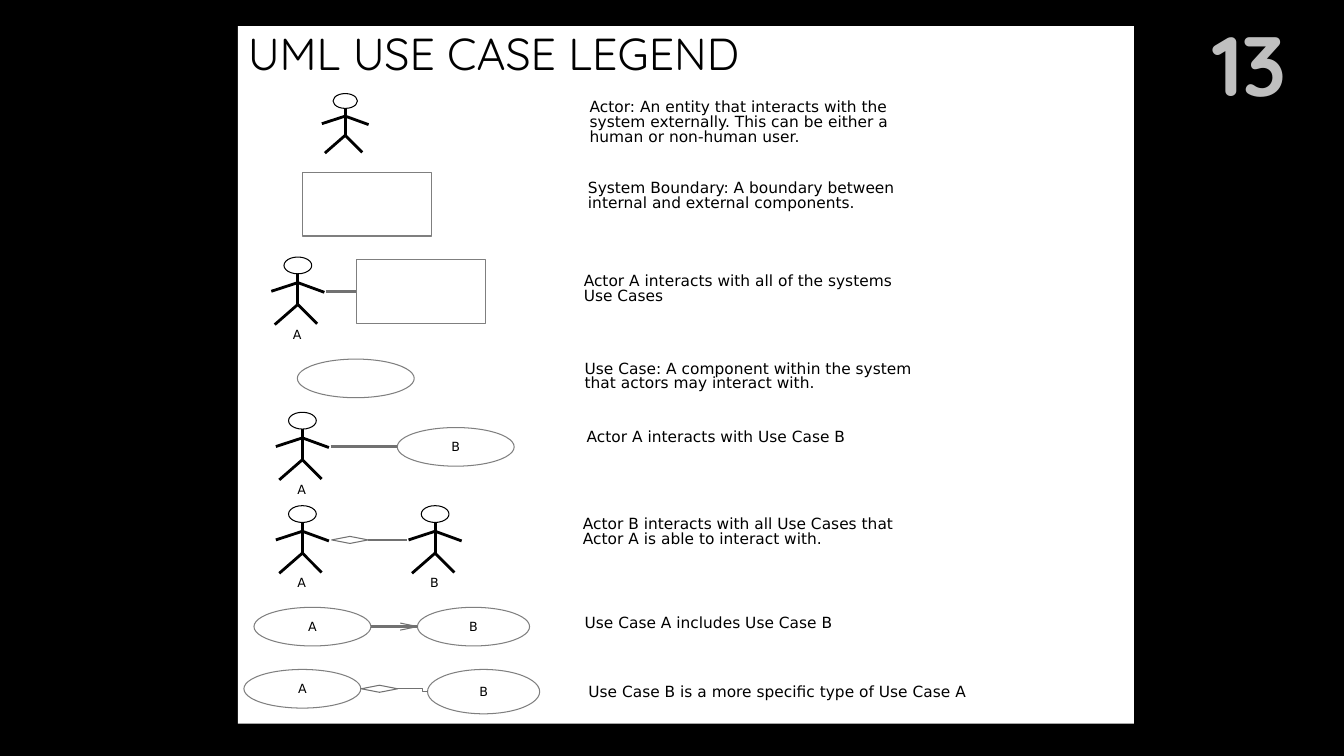
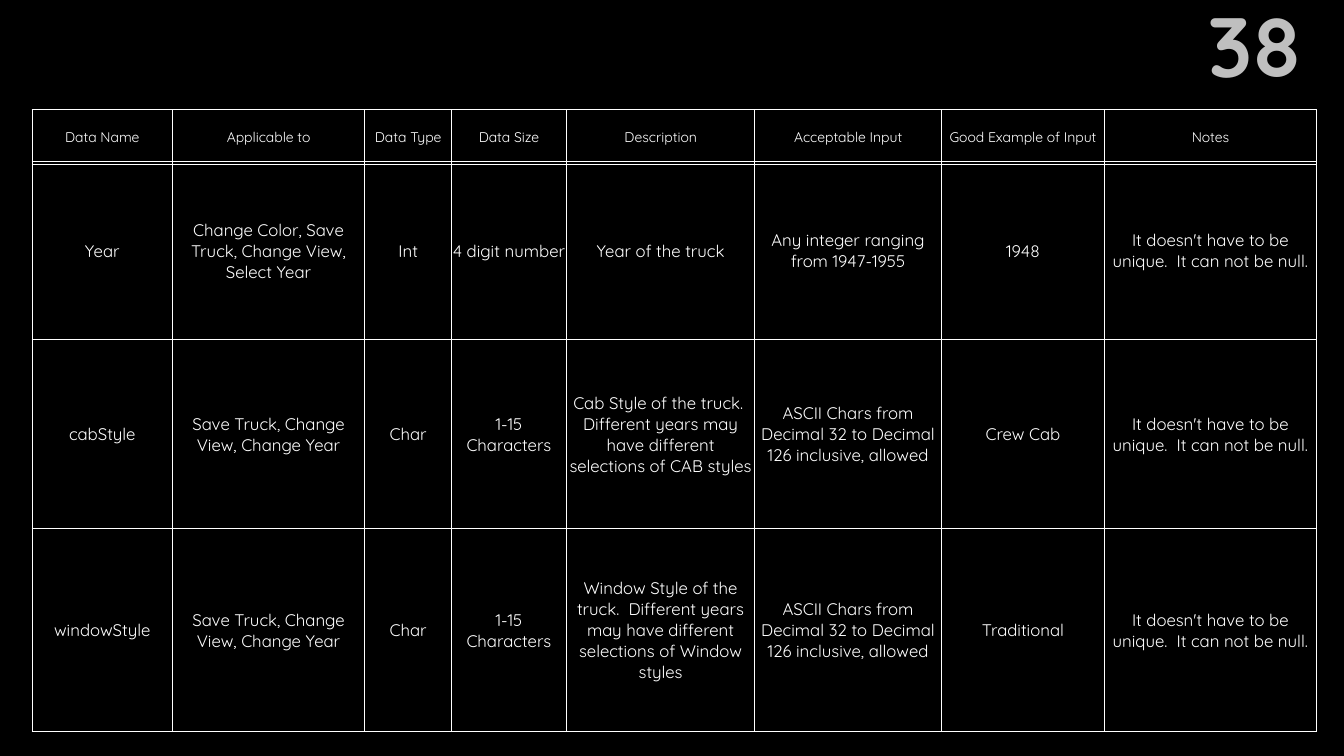
from lxml.etree import SubElement
from pptx import Presentation
from pptx.dml.color import RGBColor
from pptx.enum.shapes import MSO_CONNECTOR as Connector, MSO_SHAPE as Preset
from pptx.enum.text import MSO_ANCHOR as Anchor, PP_ALIGN as Align
from pptx.oxml.ns import qn
from pptx.util import Emu, Pt

COLUMNS, ROWS, UNIT = 160, 90, 76200
BLACK, WHITE, SILVER, GRAY, LINK = "000000", "FFFFFF", "BFBFBF", "7F7F7F", "717171"
BODY_FONT, DISPLAY_FONT = "DejaVu Sans", "Quicksand"

LEGEND = [
    (70.2, 12, 39.8, "Actor: An entity that interacts with the system externally. "
                     "This can be either a human or non-human user."),
    (70, 21.7, 39.8, "System Boundary: A boundary between internal and external components."),
    (69.5, 32.72, 39.8, "Actor A interacts with all of the systems Use Cases"),
    (69.6, 43.15, 39.8, "Use Case: A component within the system that actors may interact with."),
    (69.85, 51.25, 39.8, "Actor A interacts with Use Case B"),
    (69.4, 61.6, 39.8, "Actor B interacts with all Use Cases that "
                       "Actor A is able to interact with."),
    (69.6, 73.4, 39.8, "Use Case A includes Use Case B"),
    (70.05, 81.6, 48, "Use Case B is a more specific type of Use Case A"),
]

FIELD_WIDTHS = [16.68, 22.92, 10.32, 13.68, 22.44, 22.2, 19.44, 25.2]
FIELD_NAMES = ["Data Name", "Applicable to", "Data Type", "Data Size", "Description",
               "Acceptable Input", "Good Example of Input", "Notes"]
NOT_NULL = "It doesn't have to be unique.  It can not be null."
ASCII_INPUT = "ASCII Chars from Decimal 32 to Decimal 126 inclusive, allowed"
STYLE_USES = "Save Truck, Change View, Change Year"
FIELDS = [
    ["Year", "Change Color, Save Truck, Change View, Select Year", "Int", "4 digit number",
     "Year of the truck", "Any integer ranging from 1947-1955", "1948", NOT_NULL],
    ["cabStyle", STYLE_USES, "Char", "1-15 Characters",
     "Cab Style of the truck.  Different years may have different selections of CAB styles",
     ASCII_INPUT, "Crew Cab", NOT_NULL],
    ["windowStyle", STYLE_USES, "Char", "1-15 Characters",
     "Window Style of the truck.  Different years may have different selections of Window styles",
     ASCII_INPUT, "Traditional", NOT_NULL],
]


def grid(*lengths):
    """Turn grid lengths into slide lengths."""
    return [Emu(round(length * UNIT)) for length in lengths]


def paint(fill, color):
    """Fill with a hex colour, or leave empty."""
    if color:
        fill.solid()
        fill.fore_color.rgb = RGBColor.from_string(color)
    else:
        fill.background()


def write(frame, text, size=11, color=BLACK, font=BODY_FONT, bold=False, align=Align.LEFT,
          anchor=Anchor.TOP, margins=(0, 0, 0, 0), spacing=None, wrap=True):
    """Put formatted text into a text frame or a table cell."""
    frame.margin_left, frame.margin_top, frame.margin_right, frame.margin_bottom = grid(*margins)
    frame.vertical_anchor = anchor
    if hasattr(frame, "text_frame"):
        frame = frame.text_frame
    else:
        frame.word_wrap = wrap
    paragraph = frame.paragraphs[0]
    paragraph.alignment = align
    paragraph.line_spacing = spacing
    run = paragraph.add_run()
    run.text = text
    run.font.size, run.font.name, run.font.bold = Pt(size), font, bold
    run.font.color.rgb = RGBColor.from_string(color)


def add_text(slide, box, text, **text_format):
    """Add a text box."""
    write(slide.shapes.add_textbox(*grid(*box)).text_frame, text, **text_format)


def outline(shape, fill, line):
    """Give a shape its fill and hairline, without shadow."""
    shape.shadow.inherit = False
    paint(shape.fill, fill)
    paint(shape.line.fill, line)
    if line:
        shape.line.width = Pt(0)
    return shape


def add_preset(slide, preset, box, fill=None, line=GRAY):
    """Add a preset shape."""
    return outline(slide.shapes.add_shape(preset, *grid(*box)), fill, line)


def add_line(slide, start, end, color=LINK):
    """Add a straight hairline connector."""
    connector = slide.shapes.add_connector(Connector.STRAIGHT, *grid(*start, *end))
    paint(connector.line.fill, color)
    connector.line.width = Pt(0)
    SubElement(connector._element.spPr, qn("a:effectLst"))
    return connector


def add_polyline(slide, *points):
    """Add an open outline through the points."""
    first, *rest = [grid(*point) for point in points]
    builder = slide.shapes.build_freeform(*first, scale=1.0)
    builder.add_line_segments(rest, close=False)
    outline(builder.convert_to_shape(), None, LINK)


def add_actor(slide, center, top, label=None, scale=1):
    """Draw a stick figure hanging from the top of its head."""
    def joint(across, down):
        return center + across * scale, top + down * scale

    add_preset(slide, Preset.OVAL, (*joint(-1.65, 0), 3.3 * scale, 2 * scale), line=BLACK)
    neck, shoulder, hip = joint(0, 2), joint(0, 3.05), joint(0, 5.65)
    limbs = [(neck, hip), (shoulder, joint(-3.16, 4.08)), (shoulder, joint(3.16, 4.2)),
             (hip, joint(-2.75, 8.05)), (hip, joint(2.3, 7.95))]
    for start, end in limbs:
        add_line(slide, start, end, BLACK)
    if label:
        add_text(slide, (*joint(-0.6, 8.28), 2.4, 1.7), label, size=9, wrap=False)


def add_use_case(slide, left, top, label=None, width=13.92, height=4.6):
    """Draw a use case ellipse with its label."""
    ellipse = add_preset(slide, Preset.OVAL, (left, top, width, height), fill=WHITE)
    if label:
        write(ellipse.text_frame, label, size=9, align=Align.CENTER, anchor=Anchor.MIDDLE)


def add_diamond(slide, left, middle):
    """Draw the generalization diamond."""
    add_preset(slide, Preset.DIAMOND, (left, middle - 0.42, 4.35, 0.84), line=LINK)


def add_page_number(slide, number, box, align):
    """Add the large page number."""
    add_text(slide, box, number, size=60, color=SILVER, font=DISPLAY_FONT, bold=True,
             align=align, anchor=Anchor.MIDDLE, margins=(1.2, 0.6, 1.2, 0.6), wrap=False)


def add_field_table(slide, top, heights, rows, size):
    """Add a bordered table on the shared field columns."""
    box = grid(3.84, top, sum(FIELD_WIDTHS), sum(heights))
    table = slide.shapes.add_table(len(rows), len(FIELD_WIDTHS), *box).table
    table.first_row = table.horz_banding = False
    for column, width in zip(table.columns, grid(*FIELD_WIDTHS)):
        column.width = width
    for row, height, texts in zip(table.rows, grid(*heights), rows):
        row.height = height
        for cell, text in zip(row.cells, texts):
            write(cell, text, size=size, color=WHITE, font=DISPLAY_FONT, align=Align.CENTER,
                  anchor=Anchor.MIDDLE, margins=(0.12, 0.12, 0.12, 0))
            add_borders(cell)
            paint(cell.fill, None)


def add_borders(cell):
    """Draw a white border on every side of a cell."""
    properties = cell._tc.get_or_add_tcPr()
    for side in ("lnL", "lnR", "lnT", "lnB"):
        border = SubElement(properties, qn(f"a:{side}"), w=str(Pt(1)))
        solid = SubElement(border, qn("a:solidFill"))
        SubElement(solid, qn("a:srgbClr"), val=WHITE)


def add_slide(presentation):
    """Add a blank slide with a black background."""
    slide = presentation.slides.add_slide(presentation.slide_layouts[6])
    paint(slide.background.fill, BLACK)
    return slide


def build_legend(slide):
    """Draw the use case symbols beside their meanings."""
    add_preset(slide, Preset.RECTANGLE, (28.32, 3.12, 106.68, 83.04), fill=WHITE, line=None)
    add_text(slide, (28.32, 0, 73.92, 12.48), "UML USE CASE LEGEND", size=32,
             font=DISPLAY_FONT, anchor=Anchor.MIDDLE, margins=(1.2, 0.6, 1.2, 0.6))
    add_page_number(slide, "13", (143.16, 0.72, 13.56, 13.56), Align.LEFT)
    for left, top, width, meaning in LEGEND:
        add_text(slide, (left, top, width, 2.2), meaning, spacing=Pt(10.6))

    add_actor(slide, 41.1, 11.14, scale=0.88)
    add_preset(slide, Preset.RECTANGLE, (36, 20.5, 15.4, 7.6))

    add_actor(slide, 35.46, 30.6, "A")
    boundary = add_preset(slide, Preset.RECTANGLE, (42.4, 30.9, 15.4, 7.6))
    add_line(slide, (38.8, 34.7), (42.4, 34.7)).end_connect(boundary, 1)

    add_use_case(slide, 35.4, 42.75)

    add_actor(slide, 36, 49.08, "A")
    add_use_case(slide, 47.3, 50.9, "B")
    add_line(slide, (39.36, 53.2), (47.3, 53.2))

    for center, label in ((36, "A"), (51.8, "B")):
        add_actor(slide, center, 60.2, label)
    add_diamond(slide, 39.48, 64.28)
    add_line(slide, (43.83, 64.28), (48.5, 64.28))

    add_use_case(slide, 30.24, 72.3, "A")
    add_use_case(slide, 49.7, 72.3, "B", width=13.35)
    add_line(slide, (44.2, 74.6), (49.7, 74.6))
    add_polyline(slide, (47.65, 74.18), (49.7, 74.6), (47.65, 75.02))

    add_use_case(slide, 29.04, 79.7, "A")
    add_use_case(slide, 50.9, 79.7, "B", width=13.35, height=5.28)
    add_diamond(slide, 43, 82)
    add_polyline(slide, (47.35, 82), (50.3, 82), (50.3, 82.34), (50.9, 82.34))


def build_fields(slide):
    """Draw the data dictionary."""
    add_page_number(slide, "38", (139.08, 0, 17.04, 10.44), Align.RIGHT)
    add_field_table(slide, 19.2, [21.2, 22.5, 24.2], FIELDS, 12)
    add_field_table(slide, 13.05, [6.5], [FIELD_NAMES], 10)


def main():
    """Build and save the presentation."""
    presentation = Presentation()
    presentation.slide_width, presentation.slide_height = grid(COLUMNS, ROWS)
    for build in (build_legend, build_fields):
        build(add_slide(presentation))
    presentation.save("out.pptx")


if __name__ == "__main__":
    main()
